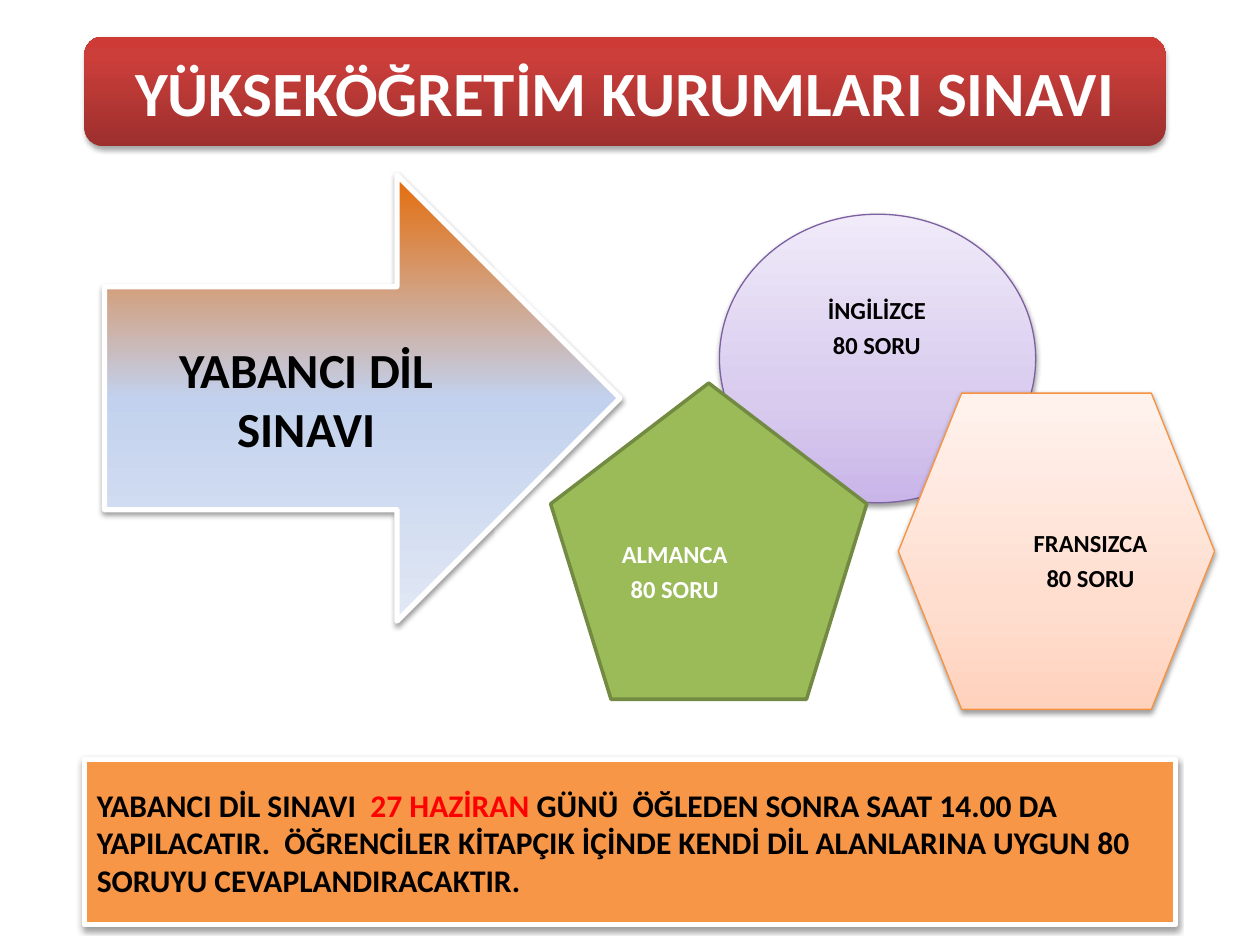
import pptx
import pptx.dml.color
import pptx.enum.shapes
import pptx.enum.text
import pptx.oxml.xmlchemy
import pptx.util
from pptx.util import Inches

SHAPE = pptx.enum.shapes.MSO_SHAPE
CENTER = pptx.enum.text.PP_ALIGN.CENTER
LEFT = pptx.enum.text.PP_ALIGN.LEFT
LANGUAGES = [
    ("İNGİLİZCE", SHAPE.OVAL, (5.71, 1.7, 2.51, 2.29), (6.31, 2.25, 1.3, 0.73),
     [(0, "C9B5E8"), (35, "D8CBEE"), (100, "F0EAF9")], ("7D60A0", 0.75), True, "000000"),
    ("FRANSIZCA", SHAPE.FLOWCHART_PREPARATION, (7.13, 3.12, 2.51, 2.51), (8.2, 3.77, 0.91, 1.38),
     [(0, "FFD2BD"), (35, "FFDED0"), (100, "FFF2ED")], ("F69240", 0.75), True, "000000"),
    ("ALMANCA", SHAPE.REGULAR_PENTAGON, (4.37, 3.04, 2.51, 2.51), (4.89, 4.02, 0.93, 1.06),
     "9BBB59", ("738A42", 2), False, "FFFFFF"),
]


def color(value):
    """Return the colour of a hex string."""
    return pptx.dml.color.RGBColor.from_string(value)


def add_element(parent, tag, **attributes):
    """Append a DrawingML element with the given attributes."""
    element = pptx.oxml.xmlchemy.OxmlElement(tag)
    for name, value in attributes.items():
        element.set(name, str(value))
    parent.append(element)
    return element


def set_gradient(fill, stops, angle):
    """Fill with (percent, colour) stops at an anticlockwise angle."""
    fill.gradient()
    fill.gradient_angle = angle
    stop_list = fill.gradient_stops[0]._gs.getparent()
    for old_stop in list(stop_list):
        stop_list.remove(old_stop)
    for percent, value in stops:
        stop = add_element(stop_list, "a:gs", pos=percent * 1000)
        add_element(stop, "a:srgbClr", val=value)


def add_shadow(shape, opacity, distance):
    """Give the shape a soft shadow below it."""
    effects = shape._element.spPr.find(pptx.oxml.ns.qn("a:effectLst"))
    shadow = add_element(effects, "a:outerShdw", blurRad=pptx.util.Pt(3.1),
                         dist=pptx.util.Pt(distance), dir=90 * 60000, rotWithShape=0)
    shadow_color = add_element(shadow, "a:srgbClr", val="000000")
    add_element(shadow_color, "a:alpha", val=opacity * 1000)


def add_figure(shapes, kind, box, fill, line=None, shadow=(38, 1.6), angle=90):
    """Add a preset shape with a plain or gradient fill."""
    shape = shapes.add_shape(kind, *map(Inches, box))
    shape.shadow.inherit = False
    if isinstance(fill, str):
        shape.fill.solid()
        shape.fill.fore_color.rgb = color(fill)
    else:
        set_gradient(shape.fill, fill, angle)
    if line:
        shape.line.color.rgb = color(line[0])
        shape.line.width = pptx.util.Pt(line[1])
    else:
        shape.line.fill.background()
    if shadow:
        add_shadow(shape, *shadow)
    return shape


def write_paragraph(paragraph, runs, size, alignment=CENTER):
    """Write bold (text, colour) runs into a paragraph."""
    paragraph.alignment = alignment
    paragraph.font.name = "Calibri"
    paragraph.font.size = pptx.util.Pt(size)
    paragraph.font.bold = True
    for text, value in runs:
        run = paragraph.add_run()
        run.text = text
        run.font.color.rgb = color(value)


def write_shape(shape, runs, size, alignment=CENTER):
    """Write one vertically centred paragraph into a shape."""
    frame = shape.text_frame
    frame.word_wrap = True
    frame.vertical_anchor = pptx.enum.text.MSO_ANCHOR.MIDDLE
    write_paragraph(frame.paragraphs[0], runs, size, alignment)


def add_label(shapes, box, lines, value):
    """Add a centred text box without margins."""
    frame = shapes.add_textbox(*map(Inches, box)).text_frame
    frame.word_wrap = True
    frame.vertical_anchor = pptx.enum.text.MSO_ANCHOR.MIDDLE
    frame.margin_left = frame.margin_right = frame.margin_top = frame.margin_bottom = 0
    for index, text in enumerate(lines):
        paragraph = frame.add_paragraph() if index else frame.paragraphs[0]
        write_paragraph(paragraph, [(text, value)], 14)
        paragraph.line_spacing = 0.9
        paragraph.space_after = pptx.util.Pt(4.9)


def main():
    """Build the exam slide and save it."""
    presentation = pptx.Presentation()
    presentation.slide_width, presentation.slide_height = Inches(10), Inches(7.5)
    shapes = presentation.slides.add_slide(presentation.slide_layouts[6]).shapes

    title = add_figure(shapes, SHAPE.ROUNDED_RECTANGLE, (0.67, 0.29, 8.58, 0.87),
                       [(0, "9C2F2D"), (80, "CB3E3A"), (100, "CE3B37")], shadow=(35, 1.8))
    write_shape(title, [("YÜKSEKÖĞRETİM KURUMLARI SINAVI", "FFFFFF")], 36)

    group = shapes.add_group_shape()
    for name, kind, box, label_box, fill, line, shaded, text_color in LANGUAGES:
        add_figure(group.shapes, kind, box, fill, line, (38, 1.6) if shaded else None)
        add_label(group.shapes, label_box, [name, "80 SORU"], text_color)

    arrow = add_figure(shapes, SHAPE.RIGHT_ARROW, (0.83, 1.39, 4.09, 3.54),
                       [(0, "E46C0A"), (50, "C2D1ED"), (100, "E1E8F5")],
                       ("FFFFFF", 3), angle=270)
    write_shape(arrow, [("YABANCI DİL SINAVI", "000000")], 28)

    note = add_figure(shapes, SHAPE.RECTANGLE, (0.67, 6.03, 8.66, 1.31), "F79646", ("FFFFFF", 3))
    write_shape(note, [
        ("YABANCI DİL SINAVI  ", "000000"),
        ("27 HAZİRAN ", "FF0000"),
        ("GÜNÜ  ÖĞLEDEN SONRA SAAT 14.00 DA  YAPILACATIR.  ÖĞRENCİLER KİTAPÇIK İÇİNDE "
         "KENDİ DİL ALANLARINA UYGUN 80 SORUYU CEVAPLANDIRACAKTIR.", "000000"),
    ], 18, LEFT)

    presentation.save("out.pptx")


if __name__ == "__main__":
    main()
